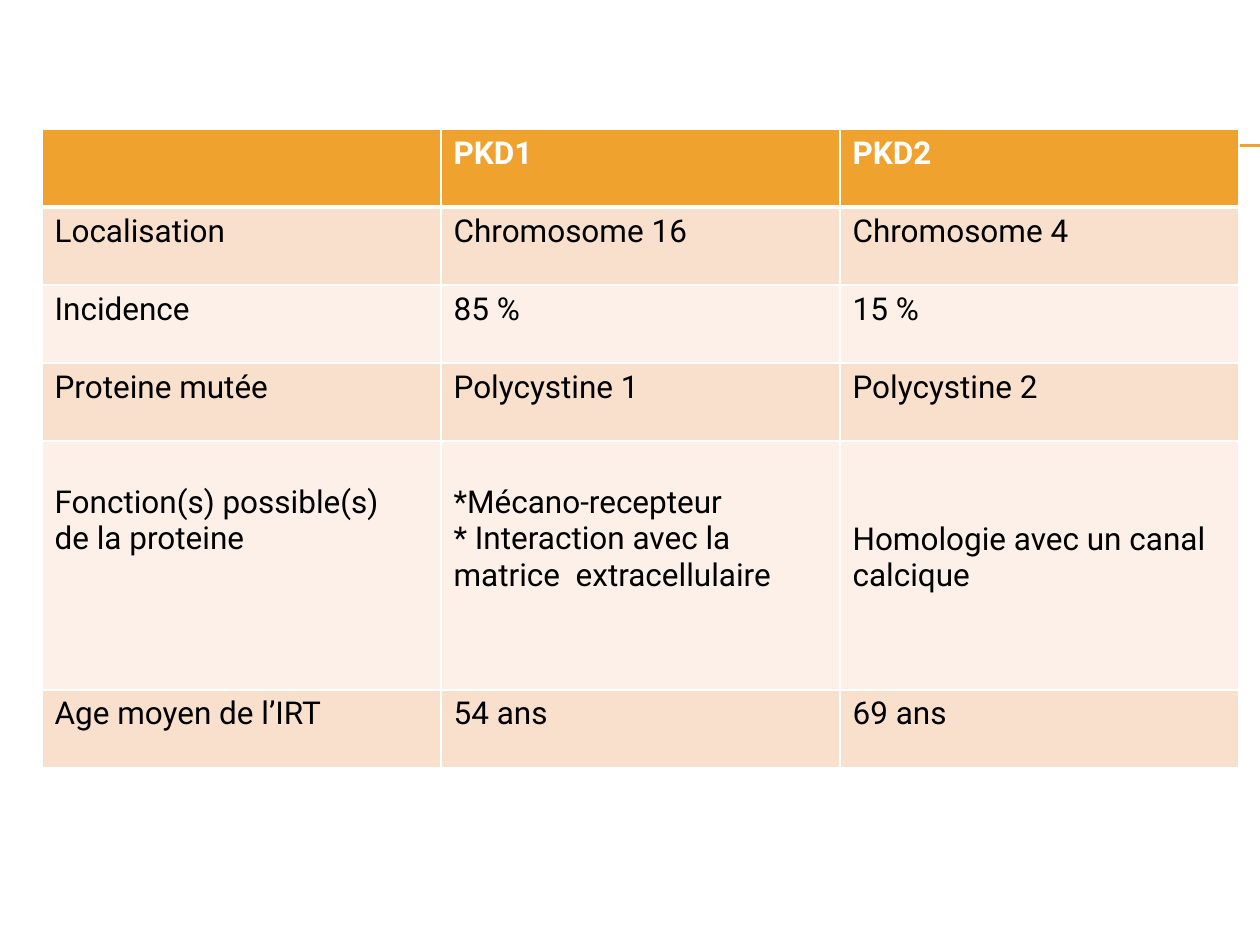
from lxml import etree
from pptx import Presentation
from pptx.dml.color import RGBColor
from pptx.enum.shapes import MSO_CONNECTOR
from pptx.oxml.ns import qn
from pptx.util import Pt

STRAIGHT = MSO_CONNECTOR.STRAIGHT
PX_PER_INCH = 126
FONT, FONT_SIZE = "Roboto", 18
ORANGE, PEACH, CREAM = "F0A22E", "F9E0CD", "FCF0E8"
WHITE, BLACK = "FFFFFF", "000000"

ROWS = [
    ("", "PKD1", "PKD2"),
    ("Localisation", "Chromosome 16", "Chromosome 4"),
    ("Incidence", "85 %", "15 %"),
    ("Proteine mutée", "Polycystine 1", "Polycystine 2"),
    ("Fonction(s) possible(s)\nde la proteine",
     "*Mécano-recepteur\n* Interaction avec la matrice  extracellulaire",
     "Homologie avec un canal calcique"),
    ("Age moyen de l’IRT", "54 ans", "69 ans"),
]
FUNCTION_ROW = 4
LINES_ABOVE = (1, 1, 2)  # free text lines above each cell of the function row

TABLE_LEFT, TABLE_TOP = 42, 129
COLUMN_WIDTH, ROW_HEIGHT, FUNCTION_HEIGHT = 399, 78, 249
CELL_MARGIN, LINE_HEIGHT = 6, 37
RULE_LEFT, RULE_RIGHT, RULE_TOPS = 71, 1260, (145, 146)


def px(length):
    return round(length * 914400 / PX_PER_INCH)


def rgb(value):
    return RGBColor.from_string(value)


def add_rule(slide, y):
    rule = slide.shapes.add_connector(
        STRAIGHT, px(RULE_LEFT), px(y), px(RULE_RIGHT), px(y))
    rule.line.color.rgb = rgb(ORANGE)
    rule.line.width = Pt(0.75)
    etree.SubElement(rule._element.spPr, qn("a:effectLst"))


def set_borders(cell, bottom_width, top_width):
    """Insert white borders ahead of the fill, as the schema orders them."""
    widths = {"a:lnL": 1, "a:lnR": 1, "a:lnT": top_width, "a:lnB": bottom_width}
    properties = cell._tc.get_or_add_tcPr()
    for position, (side, width) in enumerate(widths.items()):
        border = etree.Element(qn(side), w=str(Pt(width)))
        fill = etree.SubElement(border, qn("a:solidFill"))
        etree.SubElement(fill, qn("a:srgbClr"), val=WHITE)
        properties.insert(position, border)


def fill_cell(cell, text, row, column):
    header = row == 0
    cell.fill.solid()
    cell.fill.fore_color.rgb = rgb(ORANGE if header else PEACH if row % 2 else CREAM)
    set_borders(cell, 3 if header else 1, 3 if row == 1 else 1)
    lines_above = LINES_ABOVE[column] if row == FUNCTION_ROW else 0
    cell.margin_top = px(CELL_MARGIN + lines_above * LINE_HEIGHT)
    cell.text_frame.text = text
    for paragraph in cell.text_frame.paragraphs:
        for run in paragraph.runs:
            run.font.name = FONT
            run.font.size = Pt(FONT_SIZE)
            run.font.bold = header
            run.font.color.rgb = rgb(WHITE if header else BLACK)


def add_comparison(slide):
    heights = [FUNCTION_HEIGHT if row == FUNCTION_ROW else ROW_HEIGHT
               for row in range(len(ROWS))]
    columns = len(ROWS[0])
    table = slide.shapes.add_table(
        len(ROWS), columns, px(TABLE_LEFT), px(TABLE_TOP),
        px(columns * COLUMN_WIDTH), px(sum(heights))).table
    for column in table.columns:
        column.width = px(COLUMN_WIDTH)
    for row, texts in enumerate(ROWS):
        table.rows[row].height = px(heights[row])
        for column, text in enumerate(texts):
            fill_cell(table.cell(row, column), text, row, column)


def main():
    presentation = Presentation()
    presentation.slide_width = px(1260)
    presentation.slide_height = px(945)
    slide = presentation.slides.add_slide(presentation.slide_layouts[6])
    for y in RULE_TOPS:
        add_rule(slide, y)
    add_comparison(slide)
    presentation.save("out.pptx")


if __name__ == "__main__":
    main()
